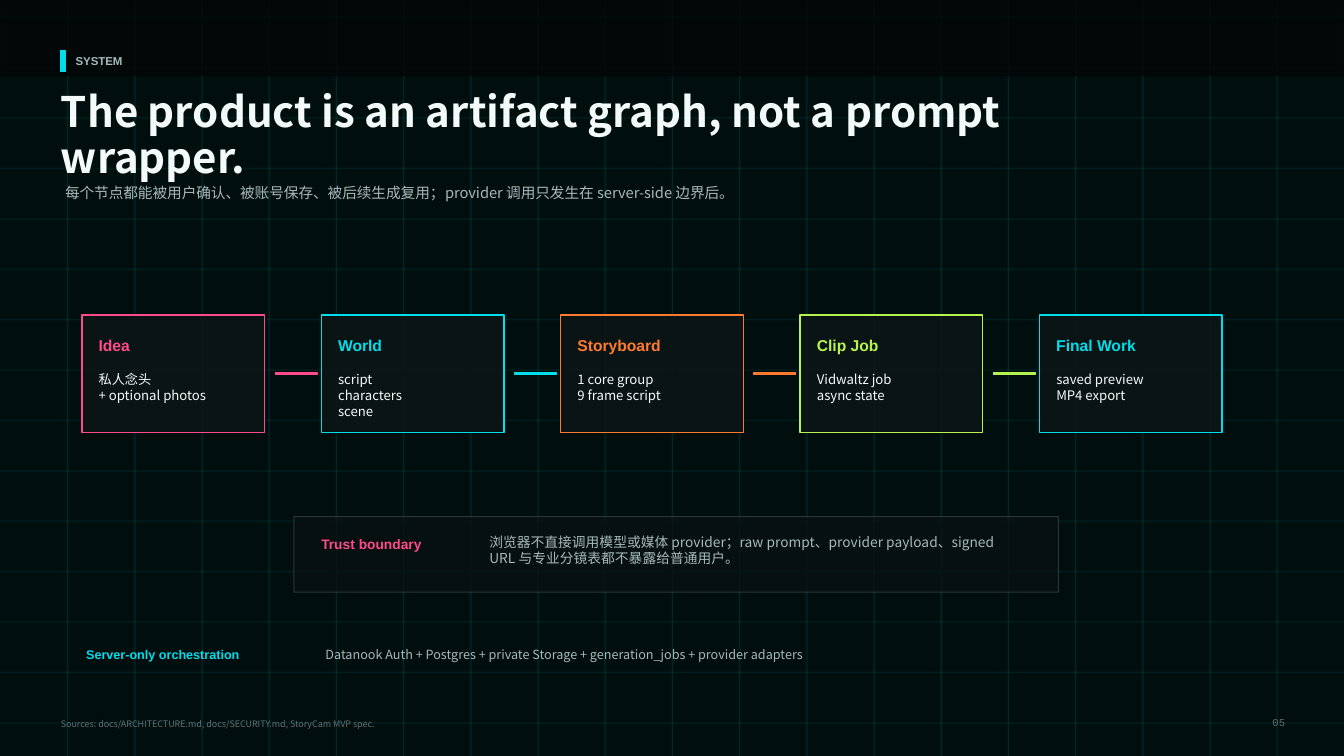
from pptx import Presentation
from pptx.dml.color import RGBColor
from pptx.enum.shapes import MSO_SHAPE
from pptx.enum.text import MSO_ANCHOR, MSO_AUTO_SIZE, PP_ALIGN
from pptx.oxml.ns import qn
from pptx.util import Pt
from lxml.etree import SubElement

PX = 9525
W, H = 1280, 720
SANS, CJK, MONO = "Arial", "Noto Sans CJK JP", "Courier New"
COLORS = {
    "base": "020606", "header": "030607", "card": "0D1516", "panel": "081111",
    "cyan": "00DDEB", "pink": "FF4B89", "orange": "FF7A2F", "lime": "B7F34E",
    "white": "FFFFFF", "text": "F4FAFA", "muted": "A7B9BB", "faint": "617175",
}

prs = Presentation()
prs.slide_width, prs.slide_height = W * PX, H * PX
s = prs.slides.add_slide(prs.slide_layouts[5])


def add_rect(box, fill, alpha=100, line=None, width=0, line_alpha=100):
    """Add a rectangle; alpha values are opacity in percent."""
    sp = s.shapes.add_shape(MSO_SHAPE.RECTANGLE, *[v * PX for v in box])
    sp.shadow.inherit = False
    sp.line.fill.background()
    paints = [(sp.fill, fill, alpha)]
    if line:
        sp.line.width = Pt(width)
        paints.append((sp.line.fill, line, line_alpha))
    for paint, color, opacity in paints:
        paint.solid()
        paint.fore_color.rgb = RGBColor.from_string(COLORS[color])
    for clr, (_, _, opacity) in zip(sp.element.spPr.iter(qn("a:srgbClr")), paints):
        if opacity < 100:
            SubElement(clr, qn("a:alpha"), val=str(opacity * 1000))


def add_text(box, text, size, font, color, bold=False, sp=None,
             anchor=MSO_ANCHOR.TOP, **para):
    """Fill a new text box, or the given placeholder, one paragraph per line."""
    sp = sp or s.shapes.add_textbox(0, 0, 0, 0)
    sp.left, sp.top, sp.width, sp.height = [v * PX for v in box]
    tf = sp.text_frame
    frame = dict(word_wrap=True, auto_size=MSO_AUTO_SIZE.NONE, vertical_anchor=anchor,
                 margin_left=0, margin_right=0, margin_top=0, margin_bottom=0)
    for name, value in frame.items():
        setattr(tf, name, value)
    tf.text = text
    for p in tf.paragraphs:
        for name, value in para.items():
            setattr(p, name, value)
        r = p.runs[0]
        for name, value in dict(size=Pt(size), name=font, bold=bold).items():
            setattr(r.font, name, value)
        r.font.color.rgb = RGBColor.from_string(COLORS[color])
        SubElement(r.font._element, qn("a:ea"), typeface=font)


# Background and grid
add_rect((0, 0, W, H), "base", line="base")
add_rect((0, 0, W, H), "cyan", 4)
for x in range(64, W, 64):
    add_rect((x, 0, 1, H), "cyan", 6, "cyan", line_alpha=6)
for y in range(16, H, 48):
    add_rect((0, y, W, 1), "cyan", 4, "cyan", line_alpha=4)

# Header
add_rect((0, 0, W, 72), "header", 80, "header", line_alpha=80)
add_rect((58, 48, 4, 20), "cyan", line="cyan")
add_text((72, 44, 260, 28), "SYSTEM", 8.2, SANS, "muted", True, anchor=MSO_ANCHOR.MIDDLE)
title = s.shapes.title
title.element.getparent().append(title.element)
add_text((58, 86, 940, 88), "The product is an artifact graph, not a prompt wrapper.",
         30, CJK, "text", True, sp=title, alignment=PP_ALIGN.LEFT, line_spacing=0.92)
add_text((62, 174, 830, 42),
         "每个节点都能被用户确认、被账号保存、被后续生成复用；provider 调用只发生在 server-side 边界后。",
         10.5, CJK, "muted", line_spacing=1.08)

# Artifact chain
stages = [
    ("Idea", "私人念头\n+ optional photos", "pink"),
    ("World", "script\ncharacters\nscene", "cyan"),
    ("Storyboard", "1 core group\n9 frame script", "orange"),
    ("Clip Job", "Vidwaltz job\nasync state", "lime"),
    ("Final Work", "saved preview\nMP4 export", "cyan"),
]
for i, (name, details, color) in enumerate(stages):
    x = 78 + 228 * i
    add_rect((x, 300, 174, 112), "card", 91, color, 0.9)
    add_text((x + 16, 320, 140, 20), name, 11.2, SANS, color, True)
    add_text((x + 16, 354, 138, 46), details, 9.4, CJK, "text")
    if i < len(stages) - 1:
        add_rect((x + 184, 355, 40, 2), color, line=color)

# Trust boundary and orchestration
add_rect((280, 492, 728, 72), "panel", 80, "white", 0.75, 16)
add_text((306, 510, 160, 20), "Trust boundary", 9.8, SANS, "pink", True)
add_text((466, 508, 498, 30),
         "浏览器不直接调用模型或媒体 provider；raw prompt、provider payload、"
         "signed URL 与专业分镜表都不暴露给普通用户。", 9.8, CJK, "muted")
add_text((82, 616, 220, 20), "Server-only orchestration", 9, SANS, "cyan", True)
add_text((310, 616, 690, 20),
         "Datanook Auth + Postgres + private Storage + generation_jobs + provider adapters",
         9, CJK, "muted")

# Footer
add_text((58, 684, 900, 18),
         "Sources: docs/ARCHITECTURE.md, docs/SECURITY.md, StoryCam MVP spec.",
         6.4, CJK, "faint")
add_text((1184, 682, 40, 18), "05", 7.5, MONO, "faint", alignment=PP_ALIGN.RIGHT)

prs.save("out.pptx")
